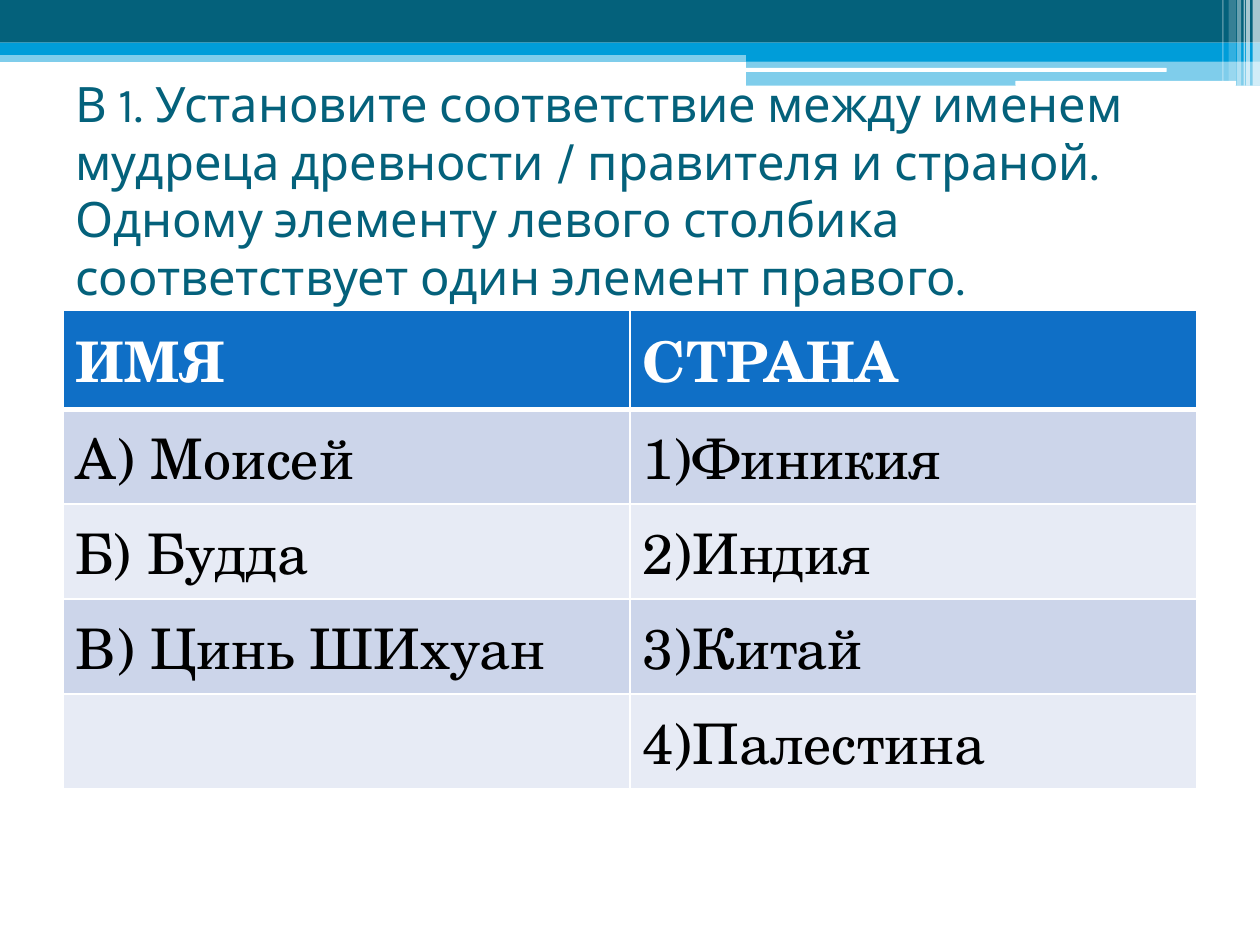
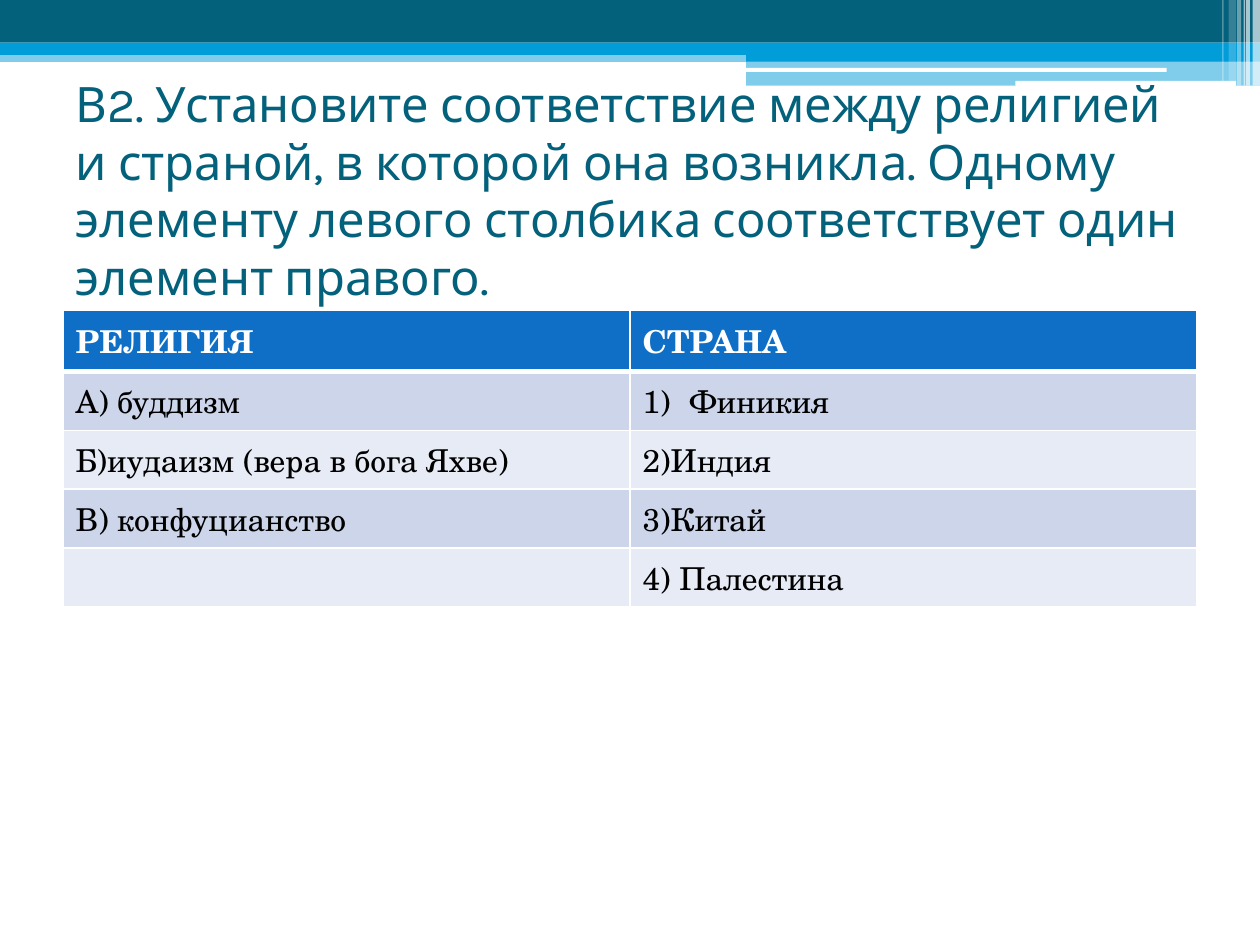
"""Build two matching-task slides with a banded header, a title and a table."""
import pptx
import pptx.util
import pptx.dml.color
import pptx.enum.shapes
import pptx.enum.text
import pptx.oxml
import pptx.oxml.ns
from lxml import etree

Cm, Pt = pptx.util.Cm, pptx.util.Pt
RECT = pptx.enum.shapes.MSO_SHAPE.RECTANGLE
ROUND = pptx.enum.shapes.MSO_SHAPE.ROUNDED_RECTANGLE
TEAL, BLUE, HEAD, WHITE, BLACK = "04617B", "009DD9", "0F6FC6", "FFFFFF", "000000"
ROWS = ("E7EBF5", "CCD5EA")

BANDS = [
    (RECT, 0, 1.02, 25.4, 0.23, BLUE, 50),
    (RECT, 0, 0, 25.4, 0.86, TEAL, 100),
    (RECT, 0, 0.86, 25.4, 0.25, BLUE, 100),
    (RECT, 15.04, 0.99, 10.36, 0.25, BLUE, 100),
    (RECT, 15.04, 1.22, 10.36, 0.51, BLUE, 50),
    (ROUND, 15.01, 1.37, 8.51, 0.08, WHITE, 100),
    (ROUND, 20.47, 1.63, 4.45, 0.1, WHITE, 100),
]
STRIPES = [
    (25.25, 0.15, 1.73, 65),
    (25.12, 0.08, 1.73, 65),
    (25.07, 0.03, 1.73, 60),
    (24.94, 0.08, 1.73, 40),
    (24.77, 0.15, 1.63, 20),
    (24.64, 0.03, 1.63, 30),
]
TASKS = [
    ("В 1. Установите соответствие между именем мудреца древности / правителя и страной. "
     "Одному элементу левого столбика соответствует один элемент правого.", 32,
     [("ИМЯ", "СТРАНА"), ("А) Моисей", "Финикия"), ("Б) Будда", "2)Индия"),
      ("В) Цинь ШИхуан", "3)Китай"), ("", "4)Палестина")]),
    ("В2. Установите соответствие между религией и страной, в которой она возникла. "
     "Одному элементу левого столбика соответствует один элемент правого.", 18,
     [("РЕЛИГИЯ", "СТРАНА"), ("А) буддизм", "Финикия"),
      ("Б)иудаизм (вера в бога Яхве)", "2)Индия"),
      ("В) конфуцианство", "3)Китай"), ("", "4) Палестина")]),
]


def hue(code):
    return pptx.dml.color.RGBColor.from_string(code)


def node(top, tag, **attrs):
    return etree.SubElement(top, pptx.oxml.ns.qn(tag), attrs)


def write(frame, text, size, font, color, bold=False, align=None, pitch=None):
    para = frame.paragraphs[0]
    para.alignment = align
    para.line_spacing = pitch
    run = para.add_run()
    run.text = text
    run.font.size, run.font.name, run.font.bold = Pt(size), font, bold
    run.font.color.rgb = hue(color)
    return para


class Deck:
    def __init__(self):
        self.file = pptx.Presentation()
        self.file.slide_width, self.file.slide_height = Cm(25.4), Cm(19.05)
        self.slide = None

    def page(self):
        self.slide = self.file.slides.add_slide(self.file.slide_layouts[5])
        for band in BANDS:
            self.band(*band)
        for left, width, height, alpha in STRIPES:
            self.band(RECT, left, 0, width, height, WHITE, alpha)

    def band(self, kind, left, top, width, height, color, alpha):
        shape = self.slide.shapes.add_shape(kind, Cm(left), Cm(top), Cm(width), Cm(height))
        shape.shadow.inherit = False
        shape.line.fill.background()
        shape.fill.solid()
        shape.fill.fore_color.rgb = hue(color)
        if alpha < 100:
            tint = shape.element.spPr.find(".//" + pptx.oxml.ns.qn("a:srgbClr"))
            node(tint, "a:alpha", val=str(alpha * 1000))

    def title(self, text):
        box = self.slide.shapes.title
        box.left, box.top, box.width, box.height = Cm(1.27), Cm(3.18), Cm(22.86), Cm(2.97)
        box.element.getparent().append(box.element)
        frame = box.text_frame
        frame.word_wrap = True
        frame.auto_size = pptx.enum.text.MSO_AUTO_SIZE.NONE
        frame.vertical_anchor = pptx.enum.text.MSO_ANCHOR.MIDDLE
        frame.margin_bottom = Cm(1.8)
        write(frame, text, 27.9, "Karla", TEAL,
              align=pptx.enum.text.PP_ALIGN.LEFT, pitch=Pt(33))

    def edge(self, cell, row):
        props = cell._tc.get_or_add_tcPr()
        wide = {"T": 3 if row == 1 else 1, "B": 3 if row == 0 else 1}
        for side in "LRTB":
            line = node(props, "a:ln" + side, w=str(Pt(wide.get(side, 1))))
            node(node(line, "a:solidFill"), "a:srgbClr", val=WHITE)

    def count(self, para):
        props = para._p.get_or_add_pPr()
        props.set("marL", str(Cm(0.95)))
        props.set("indent", str(Cm(-0.95)))
        node(props, "a:buFont", typeface="+mj-lt")
        node(props, "a:buAutoNum", type="arabicParenR")

    def table(self, rows, size):
        grid = self.slide.shapes.add_table(
            len(rows), 2, Cm(1.27), Cm(6.25), Cm(22.86), Cm(1.03 * len(rows))).table
        for row, texts in enumerate(rows):
            for col, text in enumerate(texts):
                cell = grid.cell(row, col)
                self.edge(cell, row)
                cell.fill.solid()
                cell.fill.fore_color.rgb = hue(ROWS[row % 2] if row else HEAD)
                if text:
                    para = write(cell.text_frame, text, size, "TeX Gyre Schola",
                                 BLACK if row else WHITE, bold=row == 0)
                    if (row, col) == (1, 1):
                        self.count(para)


def main():
    deck = Deck()
    for text, size, rows in TASKS:
        deck.page()
        deck.title(text)
        deck.table(rows, size)
    deck.file.save("out.pptx")


if __name__ == "__main__":
    main()
